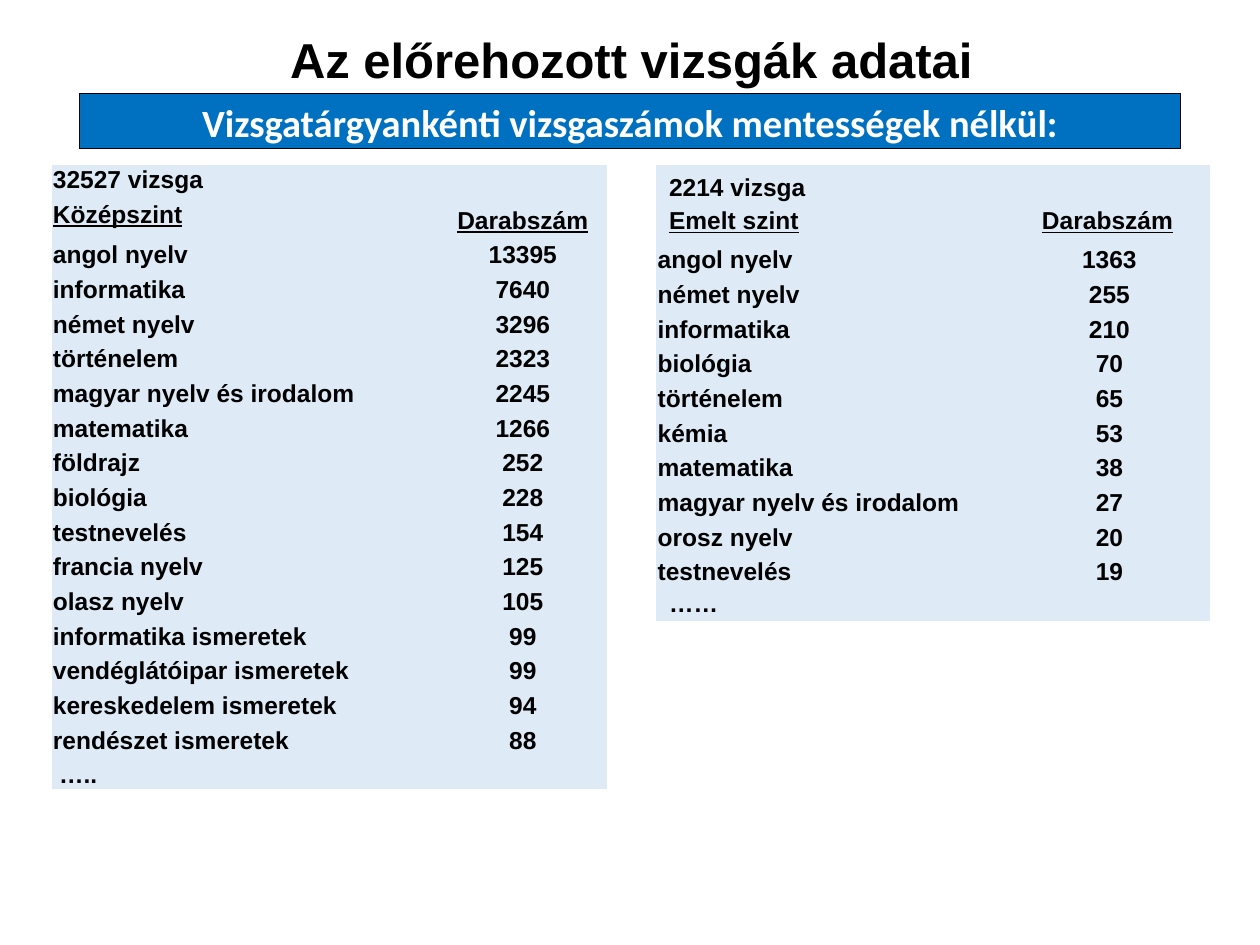
"""Builds the slide on early exam counts, with one table for each exam level."""
from dataclasses import dataclass, field

from pptx import Presentation
from pptx.dml.color import RGBColor
from pptx.enum.shapes import MSO_SHAPE
from pptx.enum.text import MSO_ANCHOR, PP_ALIGN
from pptx.oxml.ns import qn
from pptx.util import Inches, Pt

WIDTH, HEIGHT = Inches(10), Inches(7.5)
BLACK, WHITE, BLUE, PALE_BLUE = "000000", "FFFFFF", "0070C0", "DEEBF7"
PLAIN_STYLE = "{2D5ABB26-0587-4C30-8999-92F81FD0307C}"
ROW = 3.67
TIGHT = (0.01, 0.01, 0.01, 0)
ROOMY = (0.1, 0.05, 0.1, 0.05)


@dataclass
class Entry:
    """One cell's lines and the way they are set."""
    lines: list[str] = field(default_factory=list)
    align: PP_ALIGN = PP_ALIGN.LEFT
    anchor: MSO_ANCHOR = MSO_ANCHOR.BOTTOM
    margins: tuple = TIGHT
    underlined: str = ""
    spacing: float | None = None
    gap: float = 0


@dataclass
class Level:
    """One exam level's table, placed in hundredths of the slide."""
    left: float
    columns: tuple[float, float]
    header_rows: list[list[Entry]]
    header_heights: list[float]
    subjects: dict[str, int]
    ending: Entry


def across(share: float) -> int:
    """Return a length in hundredths of the slide's width."""
    return round(WIDTH * share / 100)


def down(share: float) -> int:
    """Return a length in hundredths of the slide's height."""
    return round(HEIGHT * share / 100)


def colour(code: str) -> RGBColor:
    """Return the colour for a hex string."""
    return RGBColor.from_string(code)


def place(shape, left: float, top: float, width: float, height: float) -> None:
    """Move a shape to a place given in hundredths of the slide."""
    shape.left, shape.top = across(left), down(top)
    shape.width, shape.height = across(width), down(height)


def write(paragraph, words: str, size: float, font: str, ink: str, underline: bool = False) -> None:
    """Add one bold run to a paragraph."""
    run = paragraph.add_run()
    run.text = words
    run.font.size, run.font.name, run.font.bold = Pt(size), font, True
    run.font.color.rgb = colour(ink)
    if underline:
        run.font.underline = True


def fill_cell(cell, entry: Entry) -> None:
    """Set a cell's fill, margins and lines."""
    cell.fill.solid()
    cell.fill.fore_color.rgb = colour(PALE_BLUE)
    cell.vertical_anchor = entry.anchor
    (cell.margin_left, cell.margin_top,
     cell.margin_right, cell.margin_bottom) = map(Inches, entry.margins)
    frame = cell.text_frame
    if not entry.lines:
        frame.paragraphs[0]._p.get_or_add_endParaRPr().set("sz", "1400")
    for index, line in enumerate(entry.lines):
        paragraph = frame.add_paragraph() if index else frame.paragraphs[0]
        paragraph.alignment = entry.align
        if entry.spacing:
            paragraph.line_spacing = entry.spacing
        if index and entry.gap:
            paragraph.space_before = Pt(entry.gap)
        write(paragraph, line, 14, "Arial", BLACK, line == entry.underlined)


def draw_level(slide, level: Level):
    """Draw one exam level's table and return it."""
    rows = [*level.header_rows,
            *([Entry([subject]), Entry([str(count)], PP_ALIGN.CENTER)]
              for subject, count in level.subjects.items()),
            [level.ending, Entry()]]
    heights = level.header_heights + [ROW] * (len(rows) - len(level.header_heights))
    table = slide.shapes.add_table(
        len(rows), 2, across(level.left), down(17.47),
        across(sum(level.columns)), down(sum(heights))).table
    table.first_row = table.horz_banding = False
    table._tbl.tblPr.find(qn("a:tableStyleId")).text = PLAIN_STYLE
    for column, width in zip(table.columns, level.columns):
        column.width = across(width)
    for row, height, entries in zip(table.rows, heights, rows):
        row.height = down(height)
        for cell, entry in zip(row.cells, entries):
            fill_cell(cell, entry)
    return table


ADVANCED = Level(
    52.1, (28, 15.9),
    [[Entry(["2214 vizsga", "Emelt szint"], margins=ROOMY,
            underlined="Emelt szint", spacing=0.6, gap=9.7),
      Entry(["Darabszám"], margins=(0.26, 0.05, 0.1, 0.05),
            underlined="Darabszám", spacing=0.6)]],
    [7.87],
    {"angol nyelv": 1363, "német nyelv": 255, "informatika": 210, "biológia": 70,
     "történelem": 65, "kémia": 53, "matematika": 38,
     "magyar nyelv és irodalom": 27, "orosz nyelv": 20, "testnevelés": 19},
    Entry(["……"], margins=ROOMY, spacing=0.45))

INTERMEDIATE = Level(
    4.1, (30.7, 13.4),
    [[Entry(["32527 vizsga"], anchor=MSO_ANCHOR.TOP),
      Entry(["Darabszám"], PP_ALIGN.CENTER, underlined="Darabszám")],
     [Entry(["Középszint"], anchor=MSO_ANCHOR.TOP, underlined="Középszint"), Entry()]],
    [ROW, ROW],
    {"angol nyelv": 13395, "informatika": 7640, "német nyelv": 3296,
     "történelem": 2323, "magyar nyelv és irodalom": 2245, "matematika": 1266,
     "földrajz": 252, "biológia": 228, "testnevelés": 154, "francia nyelv": 125,
     "olasz nyelv": 105, "informatika ismeretek": 99, "vendéglátóipar ismeretek": 99,
     "kereskedelem ismeretek": 94, "rendészet ismeretek": 88},
    Entry(["….."], margins=(0.06, 0.01, 0.01, 0)))


def draw_heading(slide) -> None:
    """Set the title and the banner under it."""
    title = slide.shapes.title
    place(title, 10.9, 1.07, 78.4, 10.4)
    title.text_frame.vertical_anchor = MSO_ANCHOR.MIDDLE
    heading = title.text_frame.paragraphs[0]
    heading.alignment = PP_ALIGN.CENTER
    write(heading, "Az előrehozott vizsgák adatai", 28, "Arial", BLACK)

    banner = slide.shapes.add_shape(
        MSO_SHAPE.RECTANGLE, across(6.3), down(9.87), across(87.4), down(5.87))
    banner.shadow.inherit = False
    banner.fill.solid()
    banner.fill.fore_color.rgb = colour(BLUE)
    banner.line.color.rgb = colour(BLACK)
    banner.line.width = Pt(0.75)
    banner.text_frame.word_wrap = True
    banner.text_frame.vertical_anchor = MSO_ANCHOR.TOP
    subtitle = banner.text_frame.paragraphs[0]
    subtitle.alignment = PP_ALIGN.CENTER
    write(subtitle, "Vizsgatárgyankénti vizsgaszámok mentességek nélkül:", 22, "Calibri", WHITE)


def main() -> None:
    """Build and save the presentation."""
    deck = Presentation()
    deck.slide_width, deck.slide_height = WIDTH, HEIGHT
    slide = deck.slides.add_slide(deck.slide_layouts[5])
    draw_heading(slide)
    draw_level(slide, ADVANCED)
    intermediate = draw_level(slide, INTERMEDIATE)
    intermediate.cell(0, 1).merge(intermediate.cell(1, 1))
    deck.save("out.pptx")


if __name__ == "__main__":
    main()
